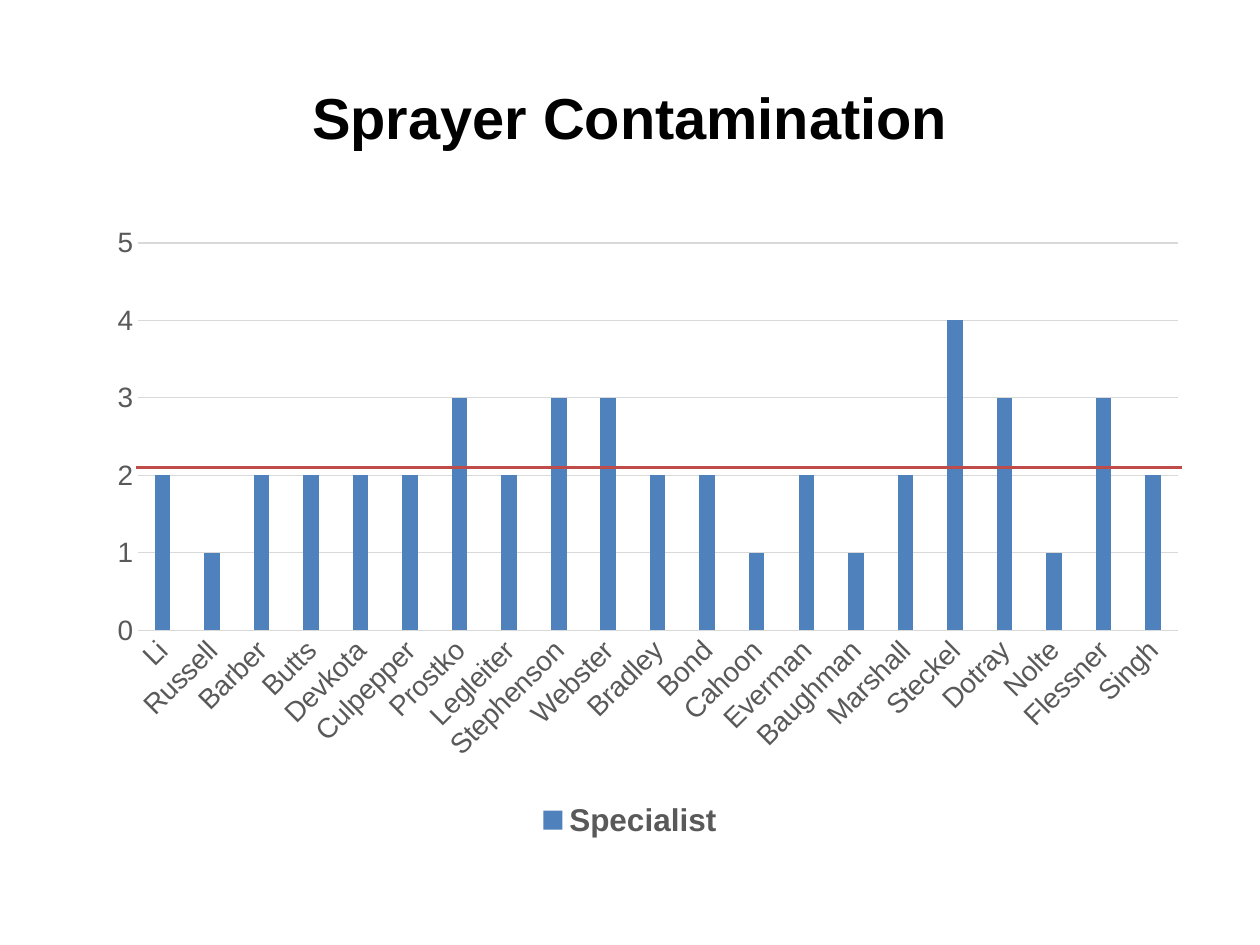
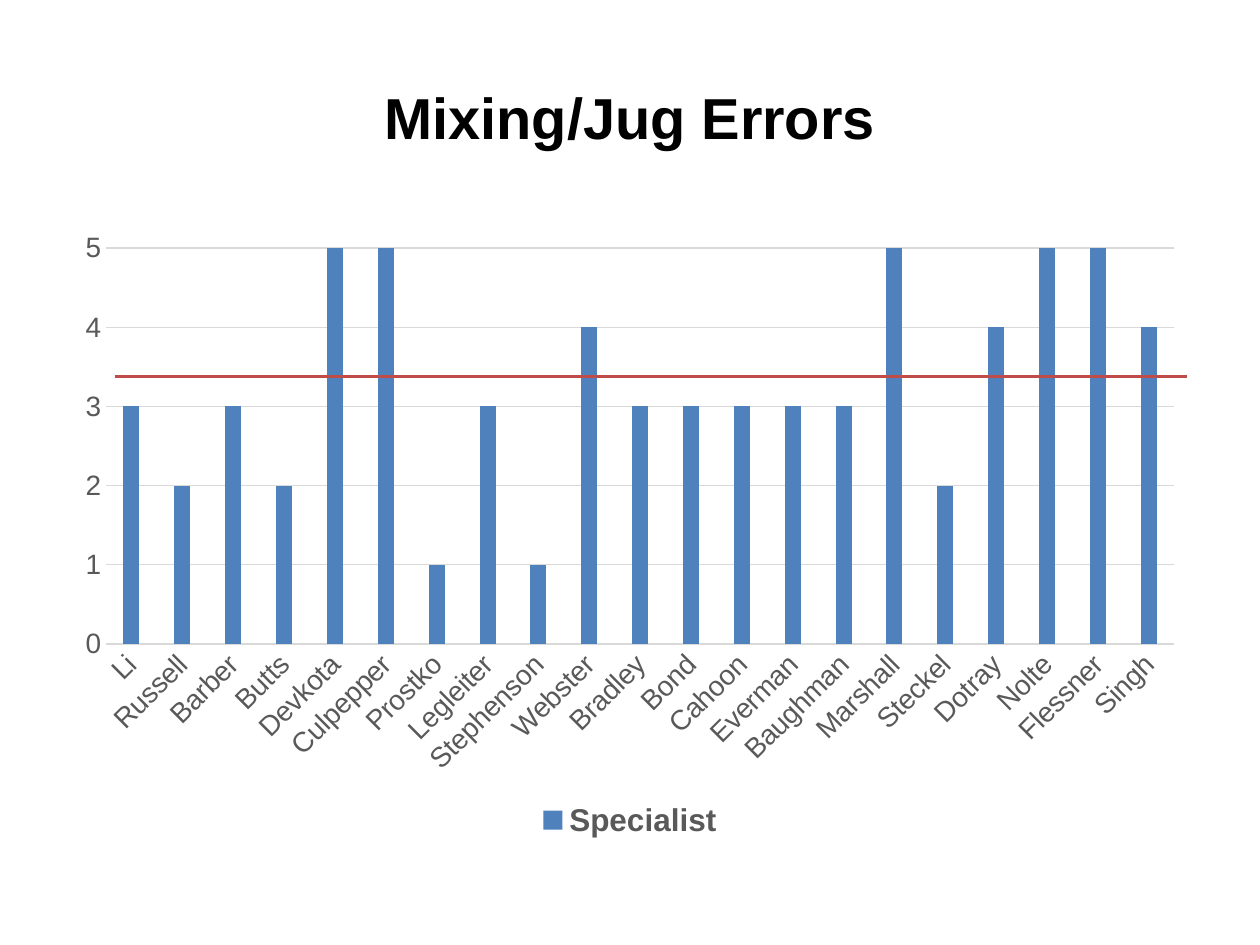
from dataclasses import dataclass
from typing import Optional

from lxml.etree import SubElement
from pptx import Presentation
from pptx.chart.data import CategoryChartData
from pptx.dml.color import RGBColor
from pptx.enum.chart import XL_CHART_TYPE as ChartType
from pptx.enum.chart import XL_LEGEND_POSITION as LegendPosition
from pptx.enum.chart import XL_TICK_MARK as TickMark
from pptx.enum.shapes import MSO_CONNECTOR as Connector
from pptx.enum.text import MSO_ANCHOR as Anchor
from pptx.enum.text import PP_ALIGN as Align
from pptx.oxml.ns import qn
from pptx.util import Inches, Pt

FONT = "Arial"
TITLE_COLOR = "000000"
LABEL_COLOR = "595959"
GRID_COLOR = "D9D9D9"
BAR_COLOR = "4F81BD"
MEAN_COLOR = "BF4C48"
LABEL_ROTATION = -45 * 60000

SPECIALISTS = (
    "Li", "Russell", "Barber", "Butts", "Devkota", "Culpepper", "Prostko",
    "Legleiter", "Stephenson", "Webster", "Bradley", "Bond", "Cahoon", "Everman",
    "Baughman", "Marshall", "Steckel", "Dotray", "Nolte", "Flessner", "Singh",
)


@dataclass(frozen=True)
class MeanLine:
    left: float
    right: float
    y: float


@dataclass(frozen=True)
class RatingSlide:
    title: str
    ratings: tuple[int, ...]
    mean: MeanLine
    plot_area: Optional[tuple[float, float, float, float]] = None


RATING_SLIDES = (
    RatingSlide(
        "Sprayer Contamination",
        (2, 1, 2, 2, 2, 2, 3, 2, 3, 3, 2, 2, 1, 2, 1, 2, 4, 3, 1, 3, 2),
        MeanLine(1.08, 9.38, 3.71),
        plot_area=(0.066, 0.036, 0.917, 0.621),
    ),
    RatingSlide(
        "Mixing/Jug Errors",
        (3, 2, 3, 2, 5, 5, 1, 3, 1, 4, 3, 3, 3, 3, 3, 5, 2, 4, 5, 5, 4),
        MeanLine(0.91, 9.42, 2.99),
    ),
)


def rgb(color: str) -> RGBColor:
    return RGBColor.from_string(color)


def style_font(font, size: float, color: str, bold: bool = False) -> None:
    font.name = FONT
    font.size = Pt(size)
    font.bold = bold
    font.color.rgb = rgb(color)


def style_line(line, color: str, width: float) -> None:
    line.color.rgb = rgb(color)
    line.width = Pt(width)


def add_title(slide, text: str) -> None:
    box = slide.shapes.add_textbox(Inches(0.5), Inches(0.3), Inches(9), Inches(1.25))
    frame = box.text_frame
    frame.word_wrap = True
    frame.vertical_anchor = Anchor.MIDDLE
    heading = frame.paragraphs[0]
    heading.text = text
    heading.alignment = Align.CENTER
    style_font(heading.font, 33, TITLE_COLOR, bold=True)


def place_plot_area(chart, area: tuple[float, float, float, float]) -> None:
    """Fix the inner plot area as fractions (x, y, w, h) of the chart."""
    plot_area = chart.element.find(".//" + qn("c:plotArea"))
    layout = plot_area.find(qn("c:layout"))
    if layout is None:
        layout = SubElement(plot_area, qn("c:layout"))
        plot_area.insert(0, layout)
    manual = SubElement(layout, qn("c:manualLayout"))
    settings = [("layoutTarget", "inner"), ("xMode", "edge"), ("yMode", "edge")]
    settings += zip("xywh", map(str, area))
    for tag, value in settings:
        SubElement(manual, qn(f"c:{tag}")).set("val", value)


def style_axes(chart) -> None:
    names, scale = chart.category_axis, chart.value_axis
    for axis in (names, scale):
        axis.major_tick_mark = axis.minor_tick_mark = TickMark.NONE
        style_font(axis.tick_labels.font, 16, LABEL_COLOR)
    style_line(names.format.line, GRID_COLOR, 0.75)
    label_body = "/".join(map(qn, ("c:catAx", "c:txPr", "a:bodyPr")))
    chart.element.find(".//" + label_body).set("rot", str(LABEL_ROTATION))
    scale.format.line.fill.background()
    scale.minimum_scale, scale.maximum_scale, scale.major_unit = 0, 5, 1
    scale.has_major_gridlines = True
    style_line(scale.major_gridlines.format.line, GRID_COLOR, 0.75)


def add_rating_chart(slide, content: RatingSlide) -> None:
    data = CategoryChartData(number_format="General")
    data.categories = SPECIALISTS
    data.add_series("Specialist", content.ratings)
    chart = slide.shapes.add_chart(
        ChartType.COLUMN_CLUSTERED,
        Inches(0.5), Inches(1.75), Inches(9), Inches(4.95), data,
    ).chart
    chart.has_title = False
    style_font(chart.font, 16, LABEL_COLOR)

    plot = chart.plots[0]
    plot.gap_width, plot.overlap = 219, -27
    plot.vary_by_categories = False
    bars = plot.series[0].format.fill
    bars.solid()
    bars.fore_color.rgb = rgb(BAR_COLOR)

    style_axes(chart)
    chart.has_legend = True
    chart.legend.position = LegendPosition.BOTTOM
    chart.legend.include_in_layout = False
    style_font(chart.legend.font, 18, LABEL_COLOR, bold=True)
    if content.plot_area:
        place_plot_area(chart, content.plot_area)


def add_mean_line(slide, mean: MeanLine) -> None:
    line = slide.shapes.add_connector(
        Connector.STRAIGHT,
        Inches(mean.left), Inches(mean.y), Inches(mean.right), Inches(mean.y),
    )
    style_line(line.line, MEAN_COLOR, 2)
    SubElement(line.element.spPr, qn("a:effectLst"))


def main() -> None:
    deck = Presentation()
    deck.slide_width, deck.slide_height = Inches(10), Inches(7.5)
    blank = deck.slide_layouts[6]
    for content in RATING_SLIDES:
        slide = deck.slides.add_slide(blank)
        add_title(slide, content.title)
        add_rating_chart(slide, content)
        add_mean_line(slide, content.mean)
    deck.save("out.pptx")


if __name__ == "__main__":
    main()
